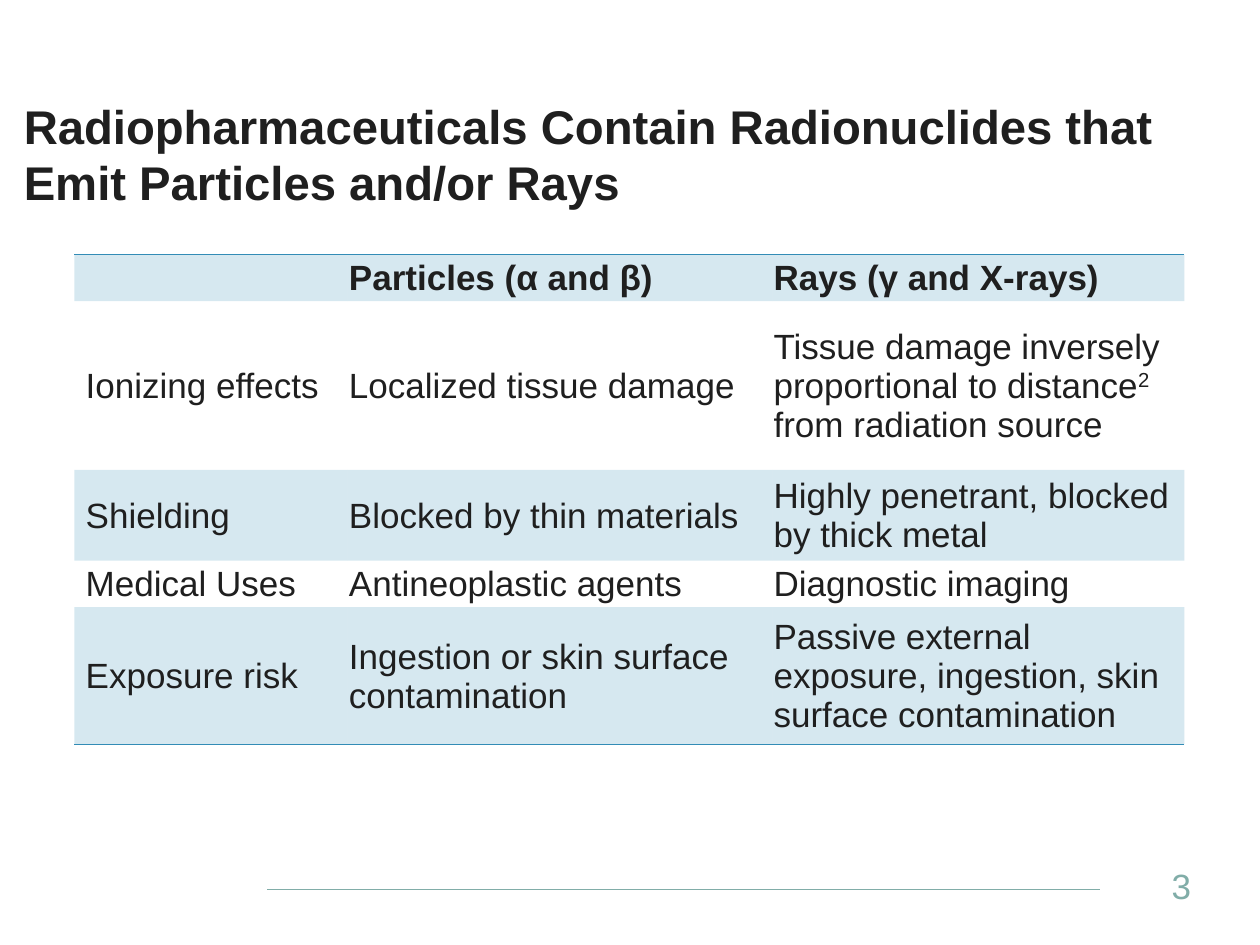
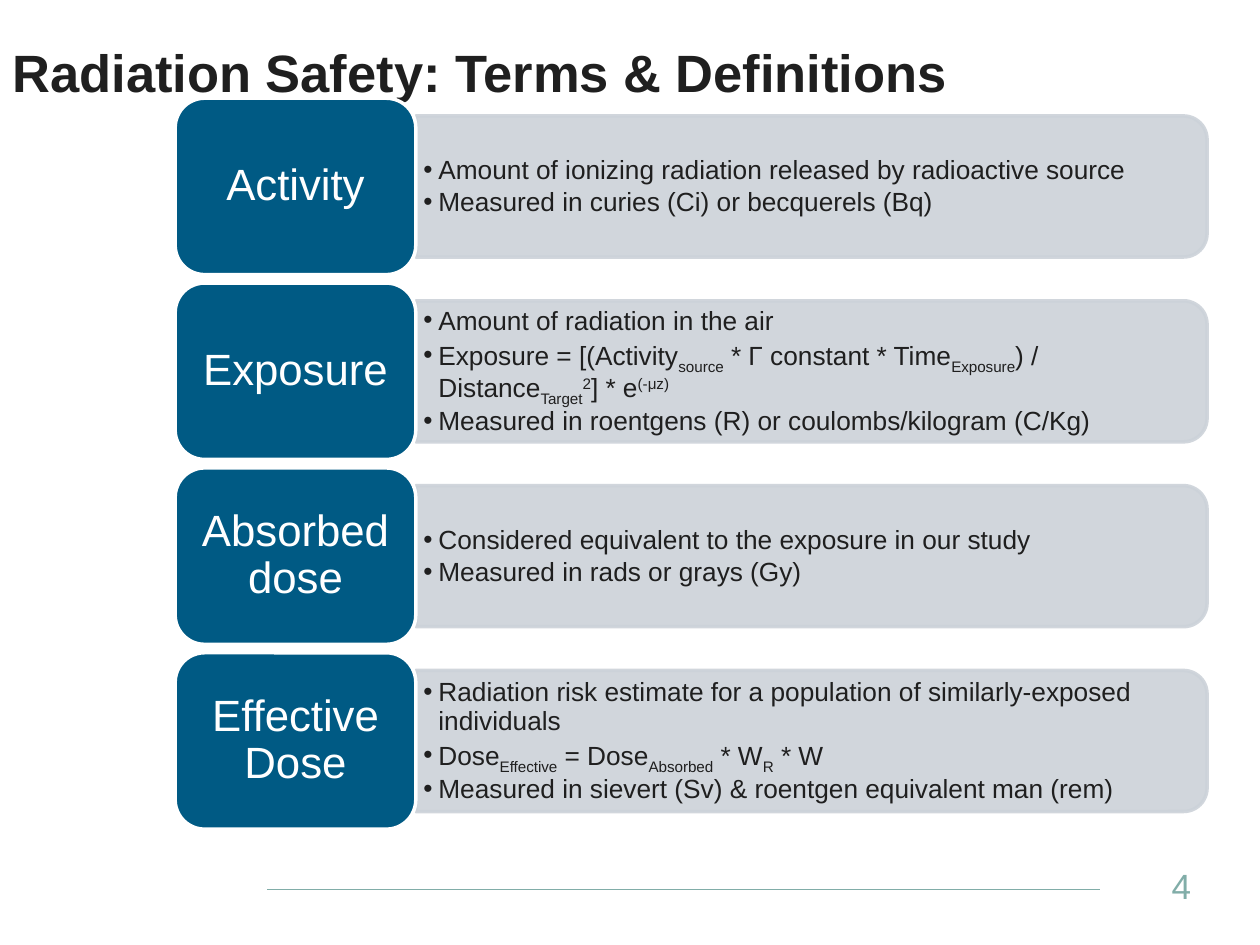
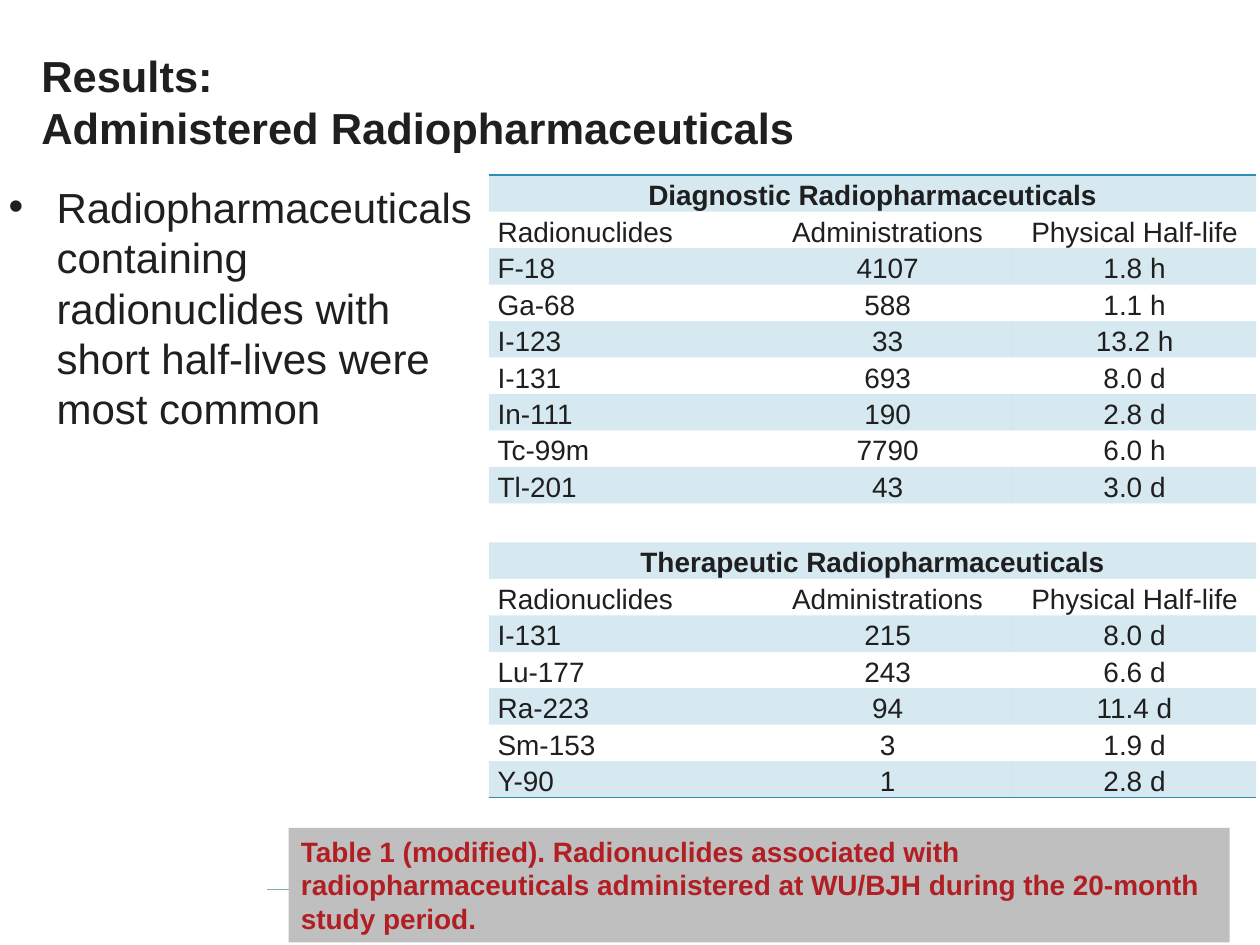
from lxml.etree import SubElement
from pptx import Presentation
from pptx.dml.color import RGBColor
from pptx.enum.shapes import MSO_CONNECTOR, MSO_SHAPE
from pptx.enum.text import MSO_ANCHOR, PP_ALIGN
from pptx.oxml.ns import qn
from pptx.util import Inches, Pt

COLORS = {
    "ink": "1F1F1F", "footer": "81ADA8", "table": "328CB6", "tile": "005A84",
    "panel": "CCD2D9", "white": "FFFFFF", "caption_fill": "BFBFBF", "caption": "B11F24",
}
FONT = "Arial"
SLIDE_W, SLIDE_H = 10, 7.5
SUB, SUP = -25000, 30000
NO_STYLE = "{2D5ABB26-0587-4C30-8999-92F81FD0307C}"

# Content: a line of text is a string or a list of strings and (string, baseline) pairs
EMISSIONS = [
    ["", "Particles (α and β)", "Rays (γ and X-rays)"],
    ["Ionizing effects", "Localized tissue damage",
     ["Tissue damage inversely proportional to distance", ("2", SUP), " from radiation source"]],
    ["Shielding", "Blocked by thin materials", "Highly penetrant, blocked by thick metal"],
    ["Medical Uses", "Antineoplastic agents", "Diagnostic imaging"],
    ["Exposure risk", "Ingestion or skin surface contamination",
     "Passive external exposure, ingestion, skin surface contamination"],
]
TERMS = [
    ("Activity", ["Amount of ionizing radiation released by radioactive source",
                  "Measured in curies (Ci) or becquerels (Bq)"]),
    ("Exposure", ["Amount of radiation in the air",
                  ["Exposure = [(Activity", ("source", SUB), " * Γ constant * Time",
                   ("Exposure", SUB), ") / Distance", ("Target", SUB), ("2", SUP),
                   "] * e", ("(-μz)", SUP)],
                  "Measured in roentgens (R) or coulombs/kilogram (C/Kg)"]),
    ("Absorbed dose", ["Considered equivalent to the exposure in our study",
                       "Measured in rads or grays (Gy)"]),
    ("Effective Dose", ["Radiation risk estimate for a population of similarly-exposed individuals",
                        ["Dose", ("Effective", SUB), " = Dose", ("Absorbed", SUB),
                         " * W", ("R", SUB), " * W"],
                        "Measured in sievert (Sv) & roentgen equivalent man (rem)"]),
]
COLUMN_NAMES = ["Radionuclides", "Administrations", "Physical Half-life"]
DIAGNOSTIC = [
    ["F-18", "4107", "1.8 h"], ["Ga-68", "588", "1.1 h"], ["I-123", "33", "13.2 h"],
    ["I-131", "693", "8.0 d"], ["In-111", "190", "2.8 d"], ["Tc-99m", "7790", "6.0 h"],
    ["Tl-201", "43", "3.0 d"],
]
THERAPEUTIC = [
    ["I-131", "215", "8.0 d"], ["Lu-177", "243", "6.6 d"], ["Ra-223", "94", "11.4 d"],
    ["Sm-153", "3", "1.9 d"], ["Y-90", "1", "2.8 d"],
]
ADMINISTERED = [["Diagnostic Radiopharmaceuticals"], COLUMN_NAMES, *DIAGNOSTIC, [""],
                ["Therapeutic Radiopharmaceuticals"], COLUMN_NAMES, *THERAPEUTIC]
FINDING = "Radiopharmaceuticals containing radionuclides with short half-lives were most common"
CAPTION = ("Table 1 (modified). Radionuclides associated with radiopharmaceuticals "
           "administered at WU/BJH during the 20-month study period.")


def rgb(name):
    return RGBColor.from_string(COLORS[name])


def inches(*lengths):
    return [Inches(length) for length in lengths]


def set_alpha(element, percent):
    for color in element.iter(qn("a:srgbClr")):
        SubElement(color, qn("a:alpha"), val=str(percent * 1000))


def set_margins(target, left, top, right, bottom):
    target.margin_left, target.margin_top, target.margin_right, target.margin_bottom = inches(
        left, top, right, bottom)


def add_runs(para, line, size, color="ink", bold=False):
    for part in [line] if isinstance(line, str) else line:
        text, baseline = (part, 0) if isinstance(part, str) else part
        span = para.add_run()
        span.text = text
        font = span.font
        font.name, font.size, font.bold = FONT, Pt(size), bold
        font.color.rgb = rgb(color)
        if baseline:
            span._r.get_or_add_rPr().set("baseline", str(baseline))


def add_bullet(para, indent):
    props = para._p.get_or_add_pPr()
    props.set("marL", str(Inches(indent)))
    props.set("indent", str(-Inches(indent)))
    SubElement(props, qn("a:buFont"), typeface=FONT)
    SubElement(props, qn("a:buChar"), char="•")


def write(shape, lines, size, color="ink", bold=False, anchor=MSO_ANCHOR.TOP,
          align=PP_ALIGN.LEFT, bullet=0, spacing=None, after=0):
    frame = shape.text_frame
    frame.word_wrap = True
    frame.vertical_anchor = anchor
    for index, line in enumerate(lines):
        para = frame.add_paragraph() if index else frame.paragraphs[0]
        para.alignment = align
        if spacing:
            para.line_spacing = spacing
        para.space_after = Pt(after)
        if bullet:
            add_bullet(para, bullet)
        add_runs(para, line, size, color, bold)
    return frame


def add_text(page, place, lines, size, **style):
    return write(page.shapes.add_textbox(*inches(*place)), lines, size, **style)


def add_block(page, kind, place, fill, line=None):
    shape = page.shapes.add_shape(kind, *inches(*place))
    shape.shadow.inherit = False
    shape.fill.solid()
    shape.fill.fore_color.rgb = rgb(fill)
    if line:
        shape.line.color.rgb = rgb(line)
        shape.line.width = Pt(2)
    else:
        shape.line.fill.background()
    return shape


def add_page(deck, title, place, size, number=None):
    page = deck.slides.add_slide(deck.slide_layouts[6])
    rule = page.shapes.add_connector(MSO_CONNECTOR.STRAIGHT, *inches(2.12, 7.06, 8.73, 7.06))
    rule.line.color.rgb = rgb("footer")
    rule.line.width = Pt(0.5)
    SubElement(rule._element.spPr, qn("a:effectLst"))
    add_text(page, place, title, size, bold=True)
    if number:
        add_text(page, (9.2, 6.83, 0.8, 0.4), [number], 20, color="footer",
                 anchor=MSO_ANCHOR.MIDDLE)
    return page


def add_border(cell, side):
    props = cell._tc.get_or_add_tcPr()
    border = SubElement(props, qn("a:" + side), w=str(Pt(1)))
    fill = SubElement(border, qn("a:solidFill"))
    SubElement(fill, qn("a:srgbClr"), val=COLORS["table"])


def add_banded_table(page, corner, widths, heights, rows, size, anchor, indent, body_align):
    """Band every other row; a row with one entry spans all columns."""
    holder = page.shapes.add_table(len(rows), len(widths),
                                   *inches(*corner, sum(widths), sum(heights)))
    table = holder.table
    table.first_row = table.horz_banding = False
    table._tbl.tblPr.find(qn("a:tableStyleId")).text = NO_STYLE
    for column, width in zip(table.columns, widths):
        column.width = Inches(width)
    for index, (row, entries) in enumerate(zip(table.rows, rows)):
        row.height = Inches(heights[index])
        spanned = len(entries) == 1
        if spanned:
            row.cells[0].merge(row.cells[len(widths) - 1])
        for place, cell in enumerate(row.cells):
            first = place == 0 and not spanned
            set_margins(cell, indent if first else 0.01, 0.01, 0.01, 0)
            cell.vertical_anchor = anchor
            if index == 0:
                add_border(cell, "lnT")
            if index == len(rows) - 1:
                add_border(cell, "lnB")
            if index % 2 == 0:
                cell.fill.solid()
                cell.fill.fore_color.rgb = rgb("table")
                set_alpha(cell._tc.tcPr.find(qn("a:solidFill")), 20)
            else:
                cell.fill.background()
            if place < len(entries):
                para = cell.text_frame.paragraphs[0]
                para.alignment = PP_ALIGN.LEFT if first else body_align
                add_runs(para, entries[place], size, bold=spanned or index == 0)


def build_emissions(deck):
    title = "Radiopharmaceuticals Contain Radionuclides that Emit Particles and/or Rays"
    page = add_page(deck, [title], (0.09, 0.72, 9.71, 0.82), 27, "3")
    add_banded_table(page, (0.59, 2.02), [2.17, 3.37, 3.27], [0.37, 1.34, 0.72, 0.37, 1.09],
                     EMISSIONS, 20, MSO_ANCHOR.MIDDLE, 0.09, PP_ALIGN.LEFT)


def build_terms(deck):
    page = add_page(deck, ["Radiation Safety: Terms & Definitions"],
                    (0, 0.27, 10.39, 0.82), 30, "4")
    left, top, pitch = 1.39, 0.78, 1.467
    tile_w, tile_h, panel_w, panel_h = 1.91, 1.4, 6.28, 1.12
    panel_left = left + tile_w
    for index, (term, facts) in enumerate(TERMS):
        y = top + index * pitch
        middle = y + tile_h / 2
        # Panel: an upright shape turned a quarter about its centre
        panel = add_block(page, MSO_SHAPE.ROUND_2_SAME_RECTANGLE,
                          (panel_left + (panel_w - panel_h) / 2, middle - panel_w / 2,
                           panel_h, panel_w), "panel", "panel")
        panel.rotation = 90
        set_alpha(panel._element.spPr, 90)
        frame = add_text(page, (panel_left, middle - 0.5, 6.23, 1.01), facts, 15,
                         anchor=MSO_ANCHOR.MIDDLE, bullet=0.12, spacing=0.9, after=2.25)
        set_margins(frame, 0.06, 0.03, 0.06, 0.03)
        # Tile with the term
        tile = add_block(page, MSO_SHAPE.ROUNDED_RECTANGLE, (left, y, tile_w, tile_h),
                         "tile", "white")
        write(tile, [term], 25, color="white", anchor=MSO_ANCHOR.MIDDLE,
              align=PP_ALIGN.CENTER, spacing=0.9)


def build_results(deck):
    page = add_page(deck, ["Results:", "Administered Radiopharmaceuticals"],
                    (0.23, 0.34, 8.97, 0.82), 24.8)
    add_text(page, (-0.03, 1.39, 3.91, 2.54), [FINDING], 24, bullet=0.38)
    caption = add_block(page, MSO_SHAPE.RECTANGLE, (2.29, 6.57, 7.47, 0.91), "caption_fill")
    write(caption, [CAPTION], 16, color="caption", bold=True)
    add_banded_table(page, (3.88, 1.39), [2.17, 1.99, 1.93], [4.92 / 17] * len(ADMINISTERED),
                     ADMINISTERED, 16, MSO_ANCHOR.BOTTOM, 0.07, PP_ALIGN.CENTER)


def main():
    deck = Presentation()
    deck.slide_width, deck.slide_height = inches(SLIDE_W, SLIDE_H)
    for build in (build_emissions, build_terms, build_results):
        build(deck)
    deck.save("out.pptx")


if __name__ == "__main__":
    main()
